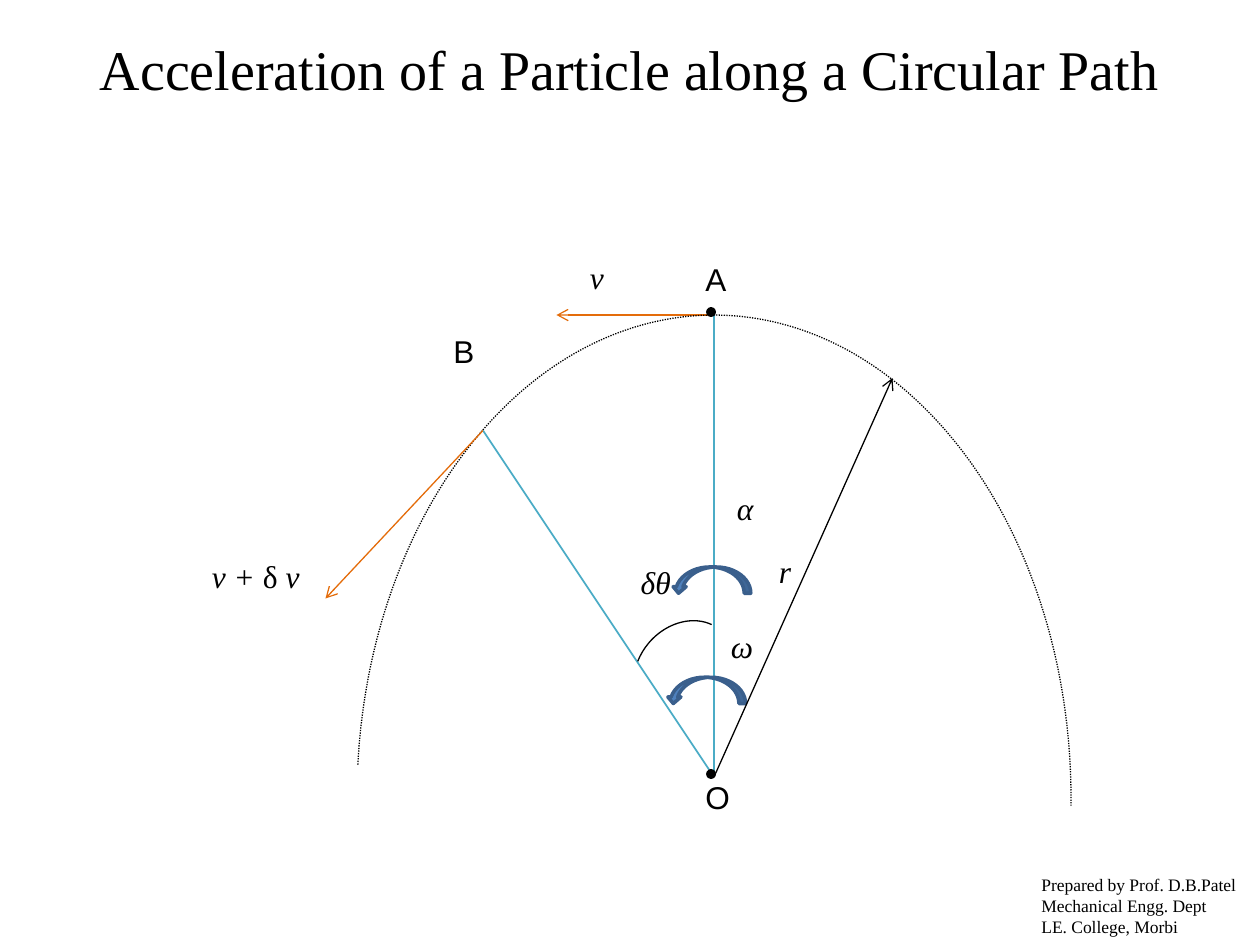
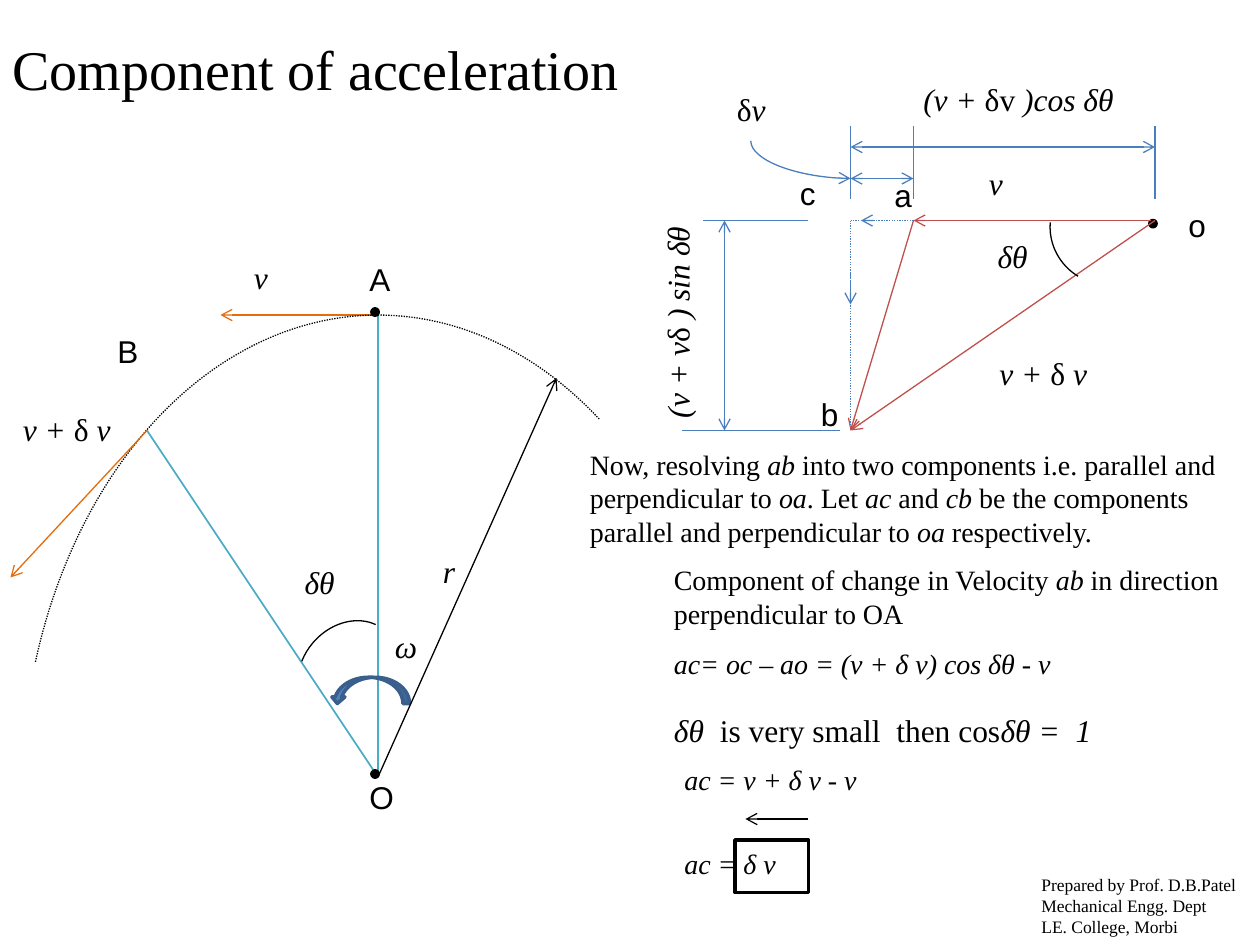
from lxml.etree import SubElement
from pptx import Presentation
from pptx.dml.color import RGBColor
from pptx.enum.dml import MSO_LINE
from pptx.enum.shapes import MSO_CONNECTOR, MSO_SHAPE
from pptx.enum.text import MSO_ANCHOR, PP_ALIGN
from pptx.oxml.ns import qn
from pptx.util import Pt

BLACK = "000000"
RADIUS = "4BACC6"
TANGENT = "E46C0A"
VECTOR = "C0504D"
DIMENSION = "4B7EBC"
SERIF = "Times New Roman"
SANS = "Arial"
FOOTER = ["Prepared by Prof. D.B.Patel", "Mechanical Engg. Dept", "LE. College, Morbi"]


def rgb(color):
    return RGBColor.from_string(color)


class Deck:
    def __init__(self):
        self.prs = Presentation()
        self.prs.slide_width, self.prs.slide_height = Pt(720), Pt(540)

    def slide(self, title, align=PP_ALIGN.LEFT):
        self.s = self.prs.slides.add_slide(self.prs.slide_layouts[6])
        self.text(title, 0, 0, 720, 78, size=32, align=align, anchor=MSO_ANCHOR.MIDDLE)

    def footer(self):
        self.text(FOOTER, 588, 496, 132, 44, size=10)

    def text(self, text, x, y, w, h=29, size=18, font=SERIF, align=PP_ALIGN.LEFT,
             anchor=MSO_ANCHOR.TOP, rotation=0):
        sp = self.s.shapes.add_textbox(Pt(x), Pt(y), Pt(w), Pt(h))
        sp.rotation = rotation
        tf = sp.text_frame
        tf.word_wrap = True
        tf.vertical_anchor = anchor
        lines = [text] if isinstance(text, str) else text
        for i, line in enumerate(lines):
            p = tf.paragraphs[0] if i == 0 else tf.add_paragraph()
            p.alignment = align
            for j, part in enumerate(line.split("*")):
                if part:
                    r = p.add_run()
                    r.text = part
                    r.font.name, r.font.size = font, Pt(size)
                    r.font.italic = j % 2 == 1
                    r.font.color.rgb = rgb(BLACK)

    def shape(self, kind, x, y, w, h, fill=None, line=BLACK, width=2.0, dash=None,
              rotation=0, adj=()):
        sp = self.s.shapes.add_shape(kind, Pt(x), Pt(y), Pt(w), Pt(h))
        sp.shadow.inherit = False
        sp.rotation = rotation
        for i, value in enumerate(adj):
            sp.adjustments[i] = value
        if fill:
            sp.fill.solid()
            sp.fill.fore_color.rgb = rgb(fill)
        else:
            sp.fill.background()
        sp.line.color.rgb = rgb(line)
        sp.line.width = Pt(width)
        if dash:
            sp.line.dash_style = dash

    def line(self, x1, y1, x2, y2, color=BLACK, width=0.75, dash=None, head=False,
             tail=False, kind=MSO_CONNECTOR.STRAIGHT):
        sp = self.s.shapes.add_connector(kind, Pt(x1), Pt(y1), Pt(x2), Pt(y2))
        sp.line.color.rgb = rgb(color)
        sp.line.width = Pt(width)
        if dash:
            sp.line.dash_style = dash
        ln = sp.line._get_or_add_ln()
        for tag, wanted in (("a:headEnd", head), ("a:tailEnd", tail)):
            if wanted:
                SubElement(ln, qn(tag), type="arrow")
        spPr = sp._element.spPr
        SubElement(spPr, qn("a:effectLst"))
        return spPr

    def quarter_curve(self, x1, y1, x2, y2, color):
        cx, cy = (x1 + x2) / 2, (y1 + y2) / 2
        dx, dy = (y2 - y1) / 2, (x2 - x1) / 2
        spPr = self.line(cx + dx, cy - dy, cx - dx, cy + dy, color, tail=True,
                         kind=MSO_CONNECTOR.CURVE)
        spPr.find(qn("a:xfrm")).set("rot", str(270 * 60000))
        spPr.find(qn("a:prstGeom")).set("prst", "curvedConnector2")

    def dot(self, x, y):
        self.shape(MSO_SHAPE.OVAL, x, y, 3.6, 3.6, fill=BLACK)

    def turn_arrow(self, x, y):
        self.shape(MSO_SHAPE.CURVED_RIGHT_ARROW, x, y, 15, 45, fill="4F81BD",
                   line="3A5F8C", rotation=90)

    def circular_path(self, x, path_adj, tip, tip_label):
        top, center = 180, 444
        bx, by = x - 132, 246
        self.line(x, top, x, center, RADIUS, 1)
        self.turn_arrow(x - 12, 372)
        self.line(x, top, x - 90, top, TANGENT, tail=True)
        self.shape(MSO_SHAPE.ARC, x - 276, 252, 552, 408, width=0.75,
                   dash=MSO_LINE.ROUND_DOT, rotation=270, adj=path_adj)
        self.line(x, center, x + 102, 216, tail=True)
        self.line(bx, by, x, center, RADIUS, 1)
        self.line(bx, by, *tip, color=TANGENT, tail=True)
        self.shape(MSO_SHAPE.ARC, x - 49, 358, 64, 53, width=0.75, rotation=310.2,
                   adj=(146.28, 209.65))
        for y in (176.5, 440.5):
            self.dot(x - 3.5, y)
        for name, dx, y in (("O", -12, 441), ("A", -12, 145), ("B", -156, 186)):
            self.text(name, x + dx, y, 42, font=SANS)
        for name, dx, y in (("v", -78, 144), ("r", 30, 312), ("ω", 2.5, 355),
                            ("δθ", -49, 318)):
            self.text(f"*{name}*", x + dx, y, 60)
        self.text("*v + *δ* v*", *tip_label, 96)

    def velocity_triangle(self):
        ox, ax, cx, y, by = 660, 522, 486, 126, 246
        dots = MSO_LINE.ROUND_DOT
        self.dot(657, y)
        for x1, y1, x2, y2 in ((658, y, ax, y), (ox, y, cx, by), (ax, y, cx, by)):
            self.line(x1, y1, x2, y2, VECTOR, tail=True)
        self.shape(MSO_SHAPE.ARC, 600, 96.5, 66, 66, width=0.75, rotation=192.8,
                   adj=(172.89, 210.9))
        self.line(ax, y, cx, y, DIMENSION, dash=dots)
        self.line(cx, by, cx, y, DIMENSION, dash=dots)
        self.line(cx, 156, cx, 174, DIMENSION, dash=dots, tail=True)
        self.line(504, y, 492, y, DIMENSION, dash=dots, tail=True)
        for x in (cx, ax, ox):
            self.line(x, 72, x, 114, DIMENSION)
        self.line(462, y, 402, y, DIMENSION)
        self.line(480, by, 390, by, DIMENSION)
        for x1, y1, x2, y2 in ((cx, 84, ox, 84), (cx, 102, ax, 102), (414, y, 414, by)):
            self.line(x1, y1, x2, y2, DIMENSION, head=True, tail=True)
        self.quarter_curve(429, 80.5, cx, 102, DIMENSION)
        for name, x, ty in (("o", 672, 114), ("a", 504, 97), ("b", 462, 222), ("c", 450, 96)):
            self.text(name, x, ty, 30, font=SANS)
        self.text("*v*", 558, 90, 66)
        self.text("*δθ*", 563, 132, 42)
        self.text("*v + *δ* v*", 564, 199, 90)
        self.text("δ*v*", 414, 48, 66)
        self.text("*(v + *δv* )cos δθ*", 510, 42, 144, align=PP_ALIGN.CENTER)
        self.text("*(v + v*δ* ) sin δθ*", 321, 165.5, 132, rotation=270)

    def derivation(self):
        self.text("Now, resolving *ab* into two components i.e. parallel and perpendicular "
                  "to *oa*. Let *ac* and *cb *be the components parallel and perpendicular "
                  "to *oa* respectively.", 330, 252, 390, 66, size=16)
        self.text("Component of change in Velocity *ab* in direction perpendicular to OA",
                  378, 318, 342, 46, size=16)
        self.text("*ac= oc – ao = (v + δ v) cos δθ - v*", 378, 366, 258, 27, size=16)
        self.text("*δθ  *is very small  then cos*δθ =  1*", 378, 403, 289)
        self.text("*ac = v + δ v - v*", 384, 432, 330, 27, size=16)
        self.text("*ac = δ v*", 384, 480, 150, 27, size=16)
        self.shape(MSO_SHAPE.RECTANGLE, 420, 480, 42, 30)
        self.line(462, 468, 426, 468, tail=True)


def main():
    deck = Deck()
    deck.slide("Acceleration of a Particle along a Circular Path", PP_ALIGN.CENTER)
    deck.circular_path(408, (165.22, 54.73), (186, 342), (114, 315))
    deck.turn_arrow(399, 309)
    deck.text("*α*", 414, 276, 30)
    deck.footer()

    deck.slide("Component of acceleration")
    deck.velocity_triangle()
    deck.derivation()
    deck.circular_path(216, (175.01, 18.17), (6, 330), (6, 231))
    deck.footer()
    deck.prs.save("out.pptx")


if __name__ == "__main__":
    main()
